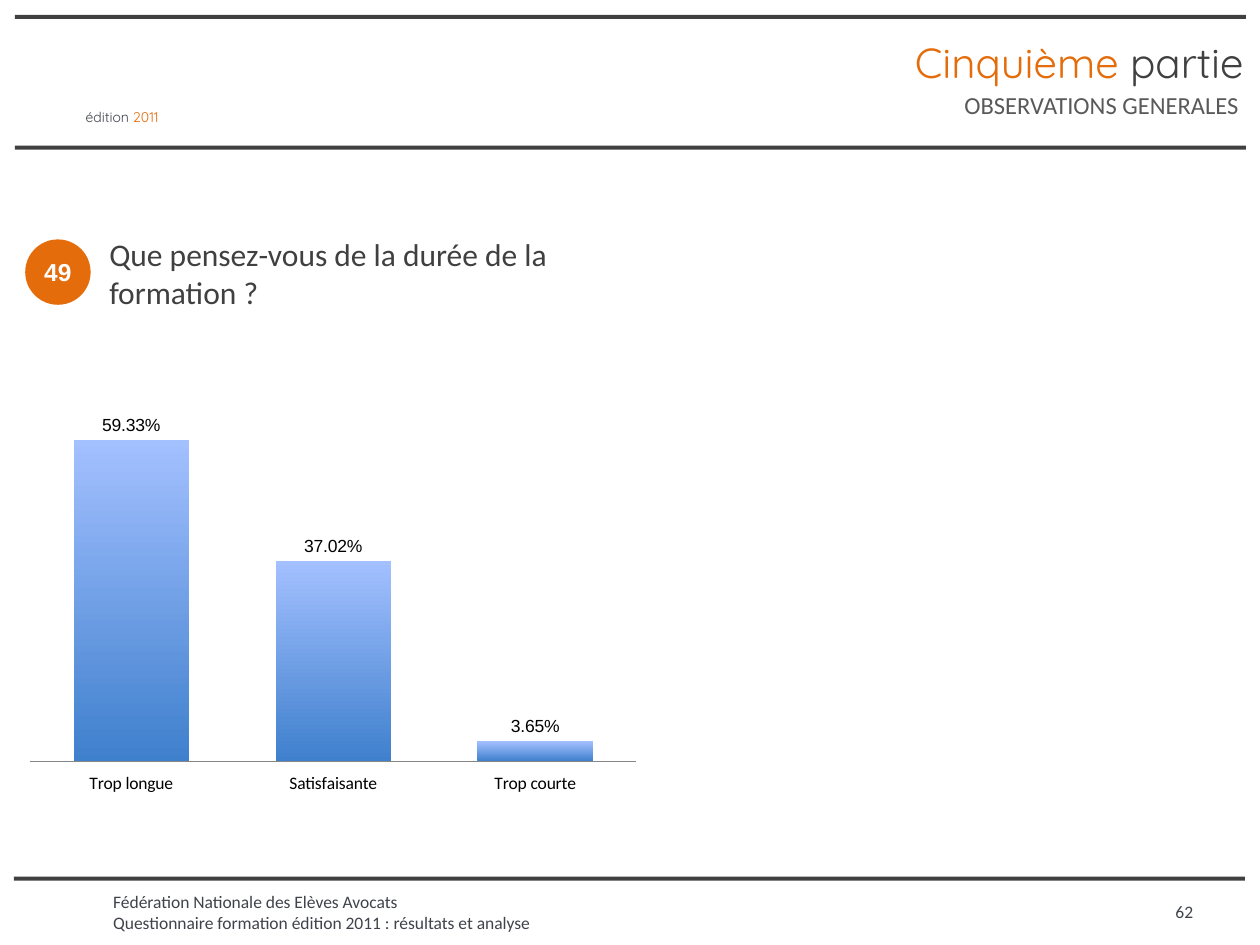
from lxml.etree import SubElement
from pptx import Presentation
from pptx.chart.data import CategoryChartData
from pptx.dml.color import RGBColor
from pptx.enum.chart import XL_CHART_TYPE, XL_LABEL_POSITION, XL_TICK_LABEL_POSITION, XL_TICK_MARK
from pptx.enum.shapes import MSO_SHAPE
from pptx.enum.text import MSO_ANCHOR, MSO_AUTO_SIZE, PP_ALIGN
from pptx.oxml.ns import qn
from pptx.util import Pt

DARK, SLATE, ORANGE = "404040", "3F434B", "E46C0A"


def rgb(code):
    return RGBColor.from_string(code)


def write(shape, lines, size, font, align=PP_ALIGN.LEFT, wrap=True, anchor=MSO_ANCHOR.TOP, bold=False):
    """Each line is a list of (text, colour) runs."""
    frame = shape.text_frame
    frame.auto_size = MSO_AUTO_SIZE.NONE
    frame.word_wrap = wrap
    frame.vertical_anchor = anchor
    for i, line in enumerate(lines):
        para = frame.add_paragraph() if i else frame.paragraphs[0]
        para.alignment = align
        for text, code in line:
            run = para.add_run()
            run.text = text
            run.font.size = Pt(size)
            run.font.name = font
            run.font.bold = bold
            run.font.color.rgb = rgb(code)


deck = Presentation()
deck.slide_width, deck.slide_height = Pt(720), Pt(540)
slide = deck.slides.add_slide(deck.slide_layouts[5])
shapes = slide.shapes

# Title
title = shapes.title
title.left, title.top, title.width, title.height = Pt(143.3), Pt(17.3), Pt(574.5), Pt(36)
write(title, [[("Cinquième ", ORANGE), ("partie", DARK)]], 24, "Quicksand", PP_ALIGN.RIGHT)

# Rules of the header and footer
for left, top in ((8.6, 8.6), (8.6, 83.3), (8, 501)):
    bar = shapes.add_shape(MSO_SHAPE.RECTANGLE, Pt(left), Pt(top), Pt(703.4), Pt(2.2))
    bar.shadow.inherit = False
    bar.fill.solid()
    bar.fill.fore_color.rgb = rgb(DARK)
    bar.line.fill.background()

# Text boxes: place, lines, size, font, alignment, wrap
R, L = PP_ALIGN.RIGHT, PP_ALIGN.LEFT
notes = [
    ((57.6, 505.4, 466.6, 31.7),
     [[("Fédération Nationale des Elèves Avocats", SLATE)],
      [("Questionnaire formation édition 2011 : résultats et analyse", SLATE)]],
     10, "Calibri", L, True),
    ((664.6, 511.2, 46, 19.4), [[("62", SLATE)]], 10, "Calibri", L, True),
    ((41.8, 58.3, 62, 17.3), [[("édition ", SLATE), ("2011", ORANGE)]], 8, "Quicksand", L, False),
    ((55.4, 131, 293, 51), [[("Que pensez-vous de la durée de la formation ?", DARK)]],
     18, "Calibri", L, True),
    ((542.2, 48.2, 172.8, 24.5), [[("OBSERVATIONS GENERALES", "595959")]], 14, "Calibri", R, False),
]
for place, lines, size, font, align, wrap in notes:
    box = shapes.add_textbox(*map(Pt, place))
    write(box, lines, size, font, align, wrap)

# Question number
badge = shapes.add_shape(MSO_SHAPE.OVAL, Pt(14.4), Pt(136.8), Pt(37.4), Pt(37.4))
badge.shadow.inherit = False
badge.fill.solid()
badge.fill.fore_color.rgb = rgb(ORANGE)
badge.line.fill.background()
badge.text_frame.margin_left = badge.text_frame.margin_right = Pt(3)
write(badge, [[("49", "FFFFFF")]], 14, "Arial", PP_ALIGN.CENTER, anchor=MSO_ANCHOR.MIDDLE, bold=True)

# Chart
data = CategoryChartData(number_format="0.00%")
data.categories = ["Trop longue", "Satisfaisante", "Trop courte"]
data.add_series("Series 1", [0.5933, 0.3702, 0.0365])
chart = shapes.add_chart(XL_CHART_TYPE.COLUMN_CLUSTERED, Pt(10.1), Pt(213.8),
                         Pt(360.7), Pt(240.5), data).chart
chart.has_legend = False
chart.has_title = False
chart.font.size = Pt(10)
chart.font.name = "Arial"
chart.font.color.rgb = rgb("000000")

# Axes
cat, val = chart.category_axis, chart.value_axis
cat.major_tick_mark = XL_TICK_MARK.NONE
cat.tick_label_position = XL_TICK_LABEL_POSITION.LOW
cat.tick_labels.font.name = "Calibri"
cat.tick_labels.font.size = Pt(10)
cat.format.line.color.rgb = rgb("868686")
cat.format.line.width = Pt(0.75)
val.minimum_scale, val.maximum_scale = 0, 0.7
val.has_major_gridlines = False
val.tick_labels.number_format = "0.00%"
val.tick_labels.number_format_is_linked = False
val.visible = False

# Columns with a vertical gradient, dark at the foot
plot = chart.plots[0]
plot.gap_width = 75
plot.vary_by_categories = False
fill = plot.series[0].format.fill
fill.gradient()
fill.gradient_angle = 90
for stop, code in zip(fill.gradient_stops, ("3F80CD", "A3C0FF")):
    stop.color.rgb = rgb(code)
plot.has_data_labels = True
labels = plot.data_labels
labels.show_value = True
labels.number_format = "0.00%"
labels.number_format_is_linked = False
labels.position = XL_LABEL_POSITION.OUTSIDE_END

# Plot area as shares of the chart
area = chart._chartSpace.chart.plotArea
layout = area.find(qn("c:layout"))
if layout is None:
    layout = area.makeelement(qn("c:layout"))
    area.insert(0, layout)
manual = SubElement(layout, qn("c:manualLayout"))
for tag, value in (("layoutTarget", "inner"), ("xMode", "edge"), ("yMode", "edge"),
                   ("x", "0.02"), ("y", "0.02"), ("w", "0.96"), ("h", "0.9")):
    SubElement(manual, qn("c:" + tag)).set("val", value)

deck.save("out.pptx")
